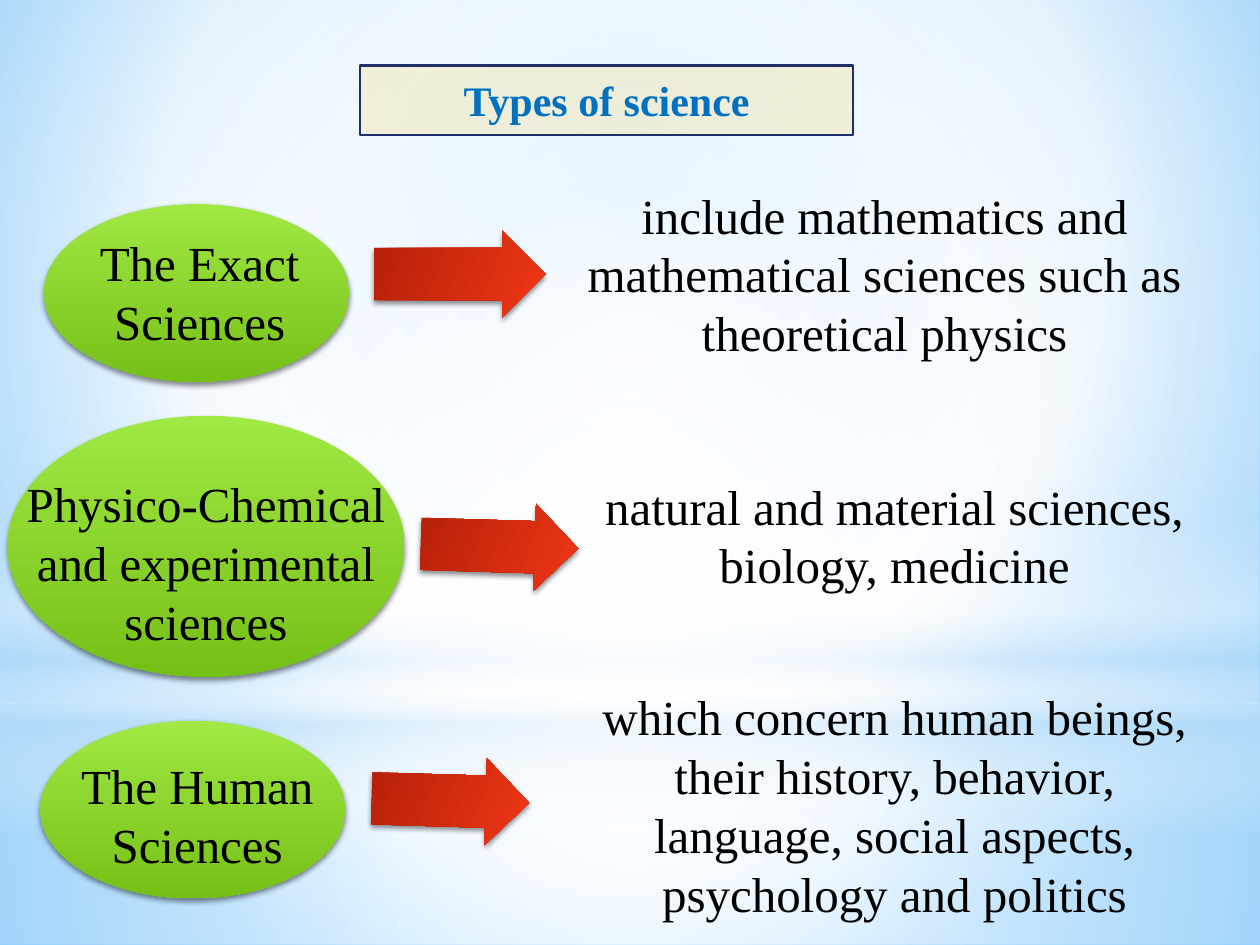
from lxml.etree import SubElement
from pptx import Presentation
from pptx.dml.color import RGBColor
from pptx.enum.shapes import MSO_SHAPE as Shape
from pptx.enum.text import MSO_ANCHOR as Anchor, MSO_AUTO_SIZE as AutoSize, PP_ALIGN as Align
from pptx.oxml.ns import qn
from pptx.util import Inches, Pt

WIDTH, HEIGHT = Inches(10), Inches(7.5)
FONT = "Times New Roman"
COLORS = {
    "white": "FFFFFF", "mist": "B4DCFA", "sky": "9ED5FF", "azure": "5BB9FF",
    "amber": "FFC000", "navy": "1F2E69", "blue": "0070C0", "black": "000000",
    "lime": "A0E844", "green": "75C016", "scarlet": "F03617", "brick": "B52007",
}
CENTER = (50, 50, 50, 50)
LIME_STOPS = [(0, "lime", 100), (100, "green", 100)]
RED_STOPS = [(0, "brick", 100), (100, "scarlet", 100)]
BACKDROP = [
    (Shape.RECTANGLE, (0, 74.4, 100, 25.6),
     [(0, "white", 91), (37, "white", 76), (100, "mist", 79)], CENTER),
    (Shape.RECTANGLE, (0, 0, 100, 74.4),
     [(0, "white", 89), (48, "white", 62), (100, "mist", 79)], CENTER),
    (Shape.RECTANGLE, (0, 54.93, 100, 33.33),
     [(0, "white", 0), (29, "white", 30), (45, "mist", 40), (55, "white", 26),
      (65, "mist", 60), (100, "white", 0)], 90),
    (Shape.OVAL, (0, 23.33, 100, 74.4), [(0, "white", 100), (56, "white", 0)], CENTER),
]
SCIENCES = [
    ("The Exact Sciences", (3.5, 21.6, 24.2, 18.8), (6.7, 24, 18.3, 13.87),
     (29.7, 24.4, 13.6, 9.2), 0,
     "include mathematics and mathematical sciences such as theoretical physics",
     (42.4, 18.93, 55.6, 20.13)),
    ("Physico-Chemical and experimental sciences", (0.6, 44, 31.5, 27.6),
     (0, 49.47, 32.7, 20.13), (33.4, 53.2, 12.5, 9.2), 1.7,
     "natural and material sciences, biology, medicine", (46, 49.73, 50, 13.87)),
    ("The Human Sciences", (3.2, 76.27, 24.2, 18.8), (5.1, 79.33, 21.1, 13.87),
     (29.5, 80.13, 12.5, 9.2), 1.7,
     "which concern human beings, their history, behavior, language, social aspects, "
     "psychology and politics", (46, 72, 50, 26.53)),
]


def place(box):
    """Turn percentages of the slide into left, top, width and height."""
    return [round(share * side / 100) for share, side in zip(box, (WIDTH, HEIGHT) * 2)]


def add_color(parent, name, opacity):
    """Append a colour with an opacity in percent."""
    color = SubElement(parent, qn("a:srgbClr"), val=COLORS[name])
    if opacity < 100:
        SubElement(color, qn("a:alpha"), val=str(opacity * 1000))


def set_gradient(fill, element, stops, direction):
    """Fill with a linear gradient for an angle, or a radial one for four insets."""
    fill.gradient()
    gradient = element.find(".//" + qn("a:gradFill"))
    for child in list(gradient):
        gradient.remove(child)
    stop_list = SubElement(gradient, qn("a:gsLst"))
    for position, name, opacity in stops:
        stop = SubElement(stop_list, qn("a:gs"), pos=str(position * 1000))
        add_color(stop, name, opacity)
    if isinstance(direction, tuple):
        radial = SubElement(gradient, qn("a:path"), path="circle")
        insets = {side: str(inset * 1000) for side, inset in zip("ltrb", direction)}
        SubElement(radial, qn("a:fillToRect"), **insets)
    else:
        SubElement(gradient, qn("a:lin"), ang=str(direction * 60000), scaled="0")


def add_gradient_shape(slide, kind, box, stops, direction):
    """Add an unlined shape with a gradient fill."""
    shape = slide.shapes.add_shape(kind, *place(box))
    shape.shadow.inherit = False
    shape.line.fill.background()
    set_gradient(shape.fill, shape.element, stops, direction)
    return shape


def add_shadow(shape):
    """Drop a soft shadow straight below a shape."""
    effects = shape.element.spPr.find(qn("a:effectLst"))
    shadow = SubElement(effects, qn("a:outerShdw"), blurRad=str(Pt(3.1)),
                        dist=str(Pt(1.8)), dir="5400000", rotWithShape="0")
    add_color(shadow, "black", 45)


def write(shape, text, size, color, bold=False):
    """Write one centred paragraph."""
    shape.text_frame.word_wrap = True
    paragraph = shape.text_frame.paragraphs[0]
    paragraph.text = text
    paragraph.alignment = Align.CENTER
    font = paragraph.font
    font.name, font.size, font.bold = FONT, Pt(size), bold
    font.color.rgb = RGBColor.from_string(COLORS[color])


def add_text(slide, text, box):
    """Add a text box that fits its text."""
    textbox = slide.shapes.add_textbox(*place(box))
    write(textbox, text, 28, "black")
    textbox.text_frame.auto_size = AutoSize.SHAPE_TO_FIT_TEXT


def add_title(slide, text, box):
    """Add the outlined title panel."""
    panel = slide.shapes.add_shape(Shape.RECTANGLE, *place(box))
    panel.shadow.inherit = False
    panel.fill.solid()
    panel.fill.fore_color.rgb = RGBColor.from_string(COLORS["amber"])
    color = panel.element.spPr.find(qn("a:solidFill")).find(qn("a:srgbClr"))
    SubElement(color, qn("a:alpha"), val="15000")
    panel.line.color.rgb = RGBColor.from_string(COLORS["navy"])
    panel.line.width = Pt(1.25)
    panel.text_frame.vertical_anchor = Anchor.MIDDLE
    write(panel, text, 24, "blue", bold=True)


def add_science(slide, name, oval_box, name_box, arrow_box, tilt, description, description_box):
    """Add a named oval, its arrow and the description it points to."""
    oval = add_gradient_shape(slide, Shape.OVAL, oval_box, LIME_STOPS, 90)
    arrow = add_gradient_shape(slide, Shape.RIGHT_ARROW, arrow_box, RED_STOPS, 20)
    arrow.adjustments[0] = 0.6
    arrow.rotation = tilt
    for shape in (oval, arrow):
        add_shadow(shape)
    add_text(slide, name, name_box)
    add_text(slide, description, description_box)


def main():
    """Build and save the slide."""
    presentation = Presentation()
    presentation.slide_width, presentation.slide_height = WIDTH, HEIGHT
    slide = presentation.slides.add_slide(presentation.slide_layouts[6])
    set_gradient(slide.background.fill, slide.element,
                 [(0, "sky", 100), (60, "white", 100), (100, "azure", 100)], (20, 10, 20, 60))
    for layer in BACKDROP:
        add_gradient_shape(slide, *layer)
    add_title(slide, "Types of science", (28.6, 6.93, 39.1, 7.33))
    for science in SCIENCES:
        add_science(slide, *science)
    presentation.save("out.pptx")


if __name__ == "__main__":
    main()
